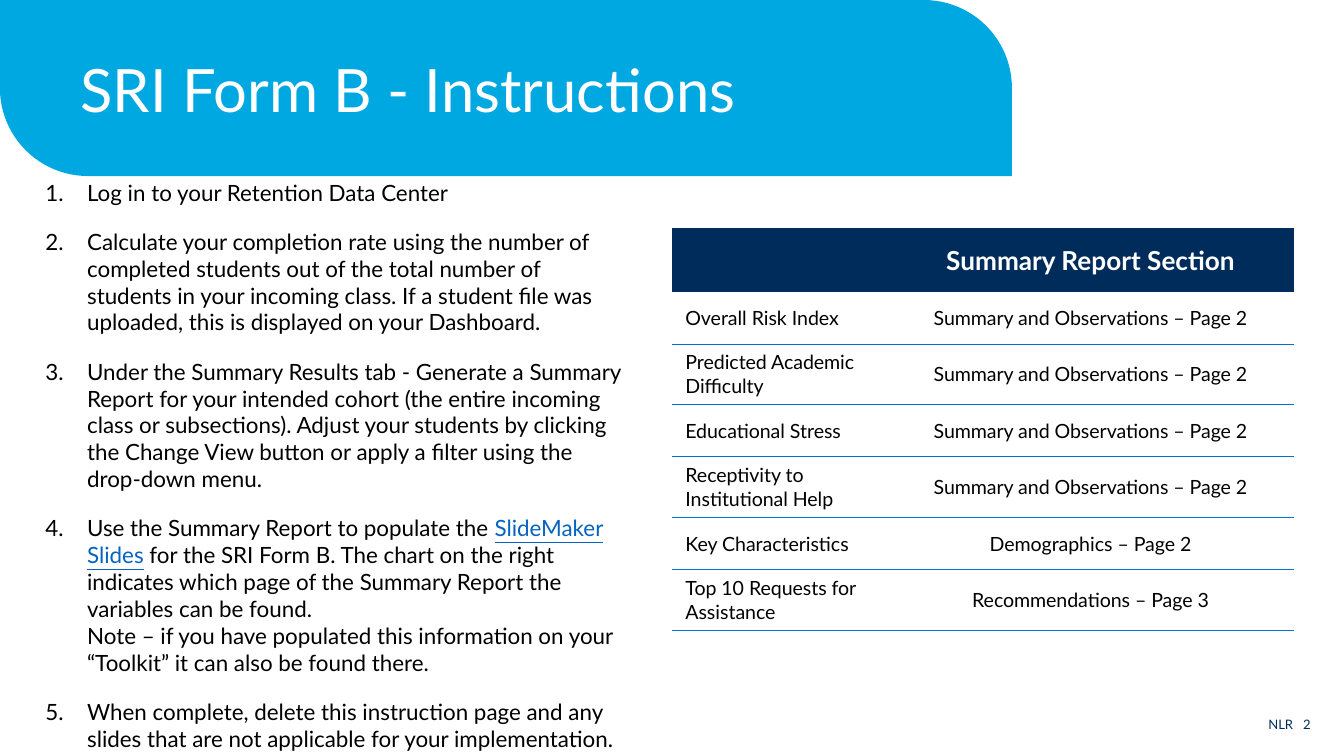
from lxml import etree
from pptx import Presentation
from pptx import util as u
from pptx.dml.color import RGBColor
from pptx.enum import shapes, text
from pptx.oxml import ns

HUES = {"sky": "00A8E2", "navy": "002C5C", "rule": "0071CE",
        "link": "0563C1", "white": "FFFFFF", "black": "000000"}


def write(para, words, hue, **form):
    """Add a run with the given font values."""
    run = para.add_run()
    run.text = words
    run.font.color.rgb = RGBColor.from_string(HUES[hue])
    for key, val in {"name": "Lato", **form}.items():
        setattr(run.font, key, val)


def add_box(left, top, width, height, **form):
    """Add a wrapped text box and return its frame."""
    box = slide.shapes.add_textbox(*map(u.Inches, (left, top, width, height)))
    for key, val in {"word_wrap": True, **form}.items():
        setattr(box.text_frame, key, val)
    return box.text_frame


# Widescreen page, 16 to 9
deck = Presentation()
deck.slide_width, deck.slide_height = u.Inches(10), u.Inches(10 * 9 / 16)
slide = deck.slides.add_slide(deck.slide_layouts[6])

# Footer
para = add_box(9.31, 5.28, 0.54, 0.22).paragraphs[0]
para.alignment = text.PP_ALIGN.RIGHT
write(para, "NLR   2", "navy", size=u.Pt(7))

# Title banner
band = slide.shapes.add_shape(shapes.MSO_SHAPE.ROUND_2_DIAG_RECTANGLE,
                              0, 0, u.Inches(7.53), u.Inches(1.31))
band.adjustments[0], band.adjustments[1] = 0, 0.5
band.shadow.inherit = False
band.fill.solid()
band.fill.fore_color.rgb = RGBColor.from_string(HUES["sky"])
band.line.fill.background()

para = add_box(0.5, 0.17, 6.29, 1.04,
               vertical_anchor=text.MSO_ANCHOR.MIDDLE).paragraphs[0]
para.line_spacing = 0.9
write(para, "SRI Form B - Instructions", "white", size=u.Pt(32))

# Numbered steps: each is a list of (words, is link); None breaks the line
steps = [
    [("Log in to your Retention Data Center", False)],
    [("Calculate your completion rate using the number of completed students "
      "out of the total number of students in your incoming class. If a student "
      "file was uploaded, this is displayed on your Dashboard.", False)],
    [("Under the Summary Results tab - Generate a Summary Report for your "
      "intended cohort (the entire incoming class or subsections). Adjust your "
      "students by clicking the Change View button or apply a filter using the "
      "drop-down menu.", False)],
    [("Use the Summary Report to populate the ", False),
     ("SlideMaker Slides", True),
     (" for the SRI Form B. The chart on the right indicates which page of the "
      "Summary Report the variables can be found.", False),
     None,
     ("Note – if you have populated this information on your “Toolkit” it can "
      "also be found there.", False)],
    [("When complete, delete this instruction page and any slides that are not "
      "applicable for your implementation.", False)],
]
body = add_box(0.24, 1.28, 4.5, 4.05)
for i, step in enumerate(steps):
    para = body.add_paragraph() if i else body.paragraphs[0]
    para.space_after = u.Pt(12)
    props = para._p.get_or_add_pPr()
    props.set("marL", str(u.Inches(0.31)))
    props.set("indent", str(-u.Inches(0.31)))
    etree.SubElement(props, ns.qn("a:buFont"), typeface="+mj-lt")
    etree.SubElement(props, ns.qn("a:buAutoNum"), type="arabicPeriod")
    for part in step:
        if part is None:
            para.add_line_break()
            continue
        words, link = part
        write(para, words, "link" if link else "black",
              size=u.Pt(12), underline=link)

# Table of report sections
notes = "Summary and Observations – Page 2"
rows = [
    ("", "Summary Report Section"),
    ("Overall Risk Index", notes),
    ("Predicted Academic Difficulty", notes),
    ("Educational Stress", notes),
    ("Receptivity to Institutional Help", notes),
    ("Key Characteristics", "Demographics – Page 2"),
    ("Top 10 Requests for Assistance", "Recommendations – Page 3"),
]
frame = slide.shapes.add_table(len(rows), 2, u.Inches(5), u.Inches(1.7),
                               u.Inches(4.63), u.Inches(2.98))
grid = frame.table
grid.first_row = grid.horz_banding = False
# Plain table style without borders
grid._tbl.tblPr.find(ns.qn("a:tableStyleId")).text = \
    "{2D5ABB26-0587-4C30-8999-92F81FD0307C}"
for col, width in zip(grid.columns, (1.6, 3.03)):
    col.width = u.Inches(width)

for r, row in enumerate(rows):
    head = r == 0
    grid.rows[r].height = u.Inches(0.47 if head else 0.39 if r % 2 else 0.43)
    for c, words in enumerate(row):
        cell = grid.cell(r, c)
        cell.vertical_anchor = text.MSO_ANCHOR.MIDDLE
        cell.fill.solid()
        cell.fill.fore_color.rgb = RGBColor.from_string(
            HUES["navy" if head else "white"])
        para = cell.text_frame.paragraphs[0]
        if c:
            para.alignment = text.PP_ALIGN.CENTER
        if words:
            write(para, words, "white" if head else "black",
                  size=u.Pt(14 if head else 10.5), bold=head)
        if not head:
            # Thin rule below the cell
            line = etree.Element(ns.qn("a:lnB"), w=str(u.Pt(0.5)))
            fill = etree.SubElement(line, ns.qn("a:solidFill"))
            etree.SubElement(fill, ns.qn("a:srgbClr"), val=HUES["rule"])
            cell._tc.get_or_add_tcPr().insert(0, line)

deck.save("out.pptx")
